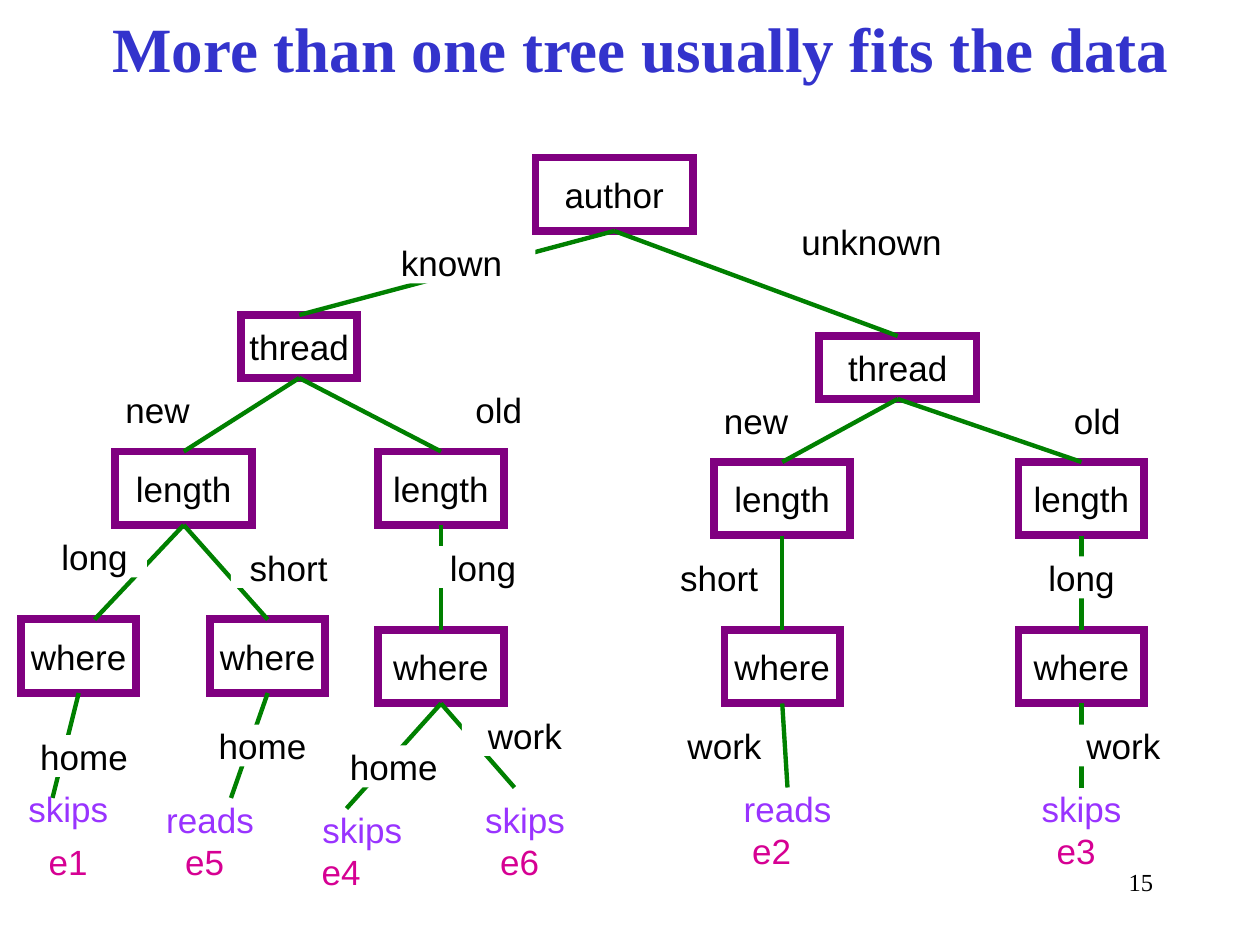
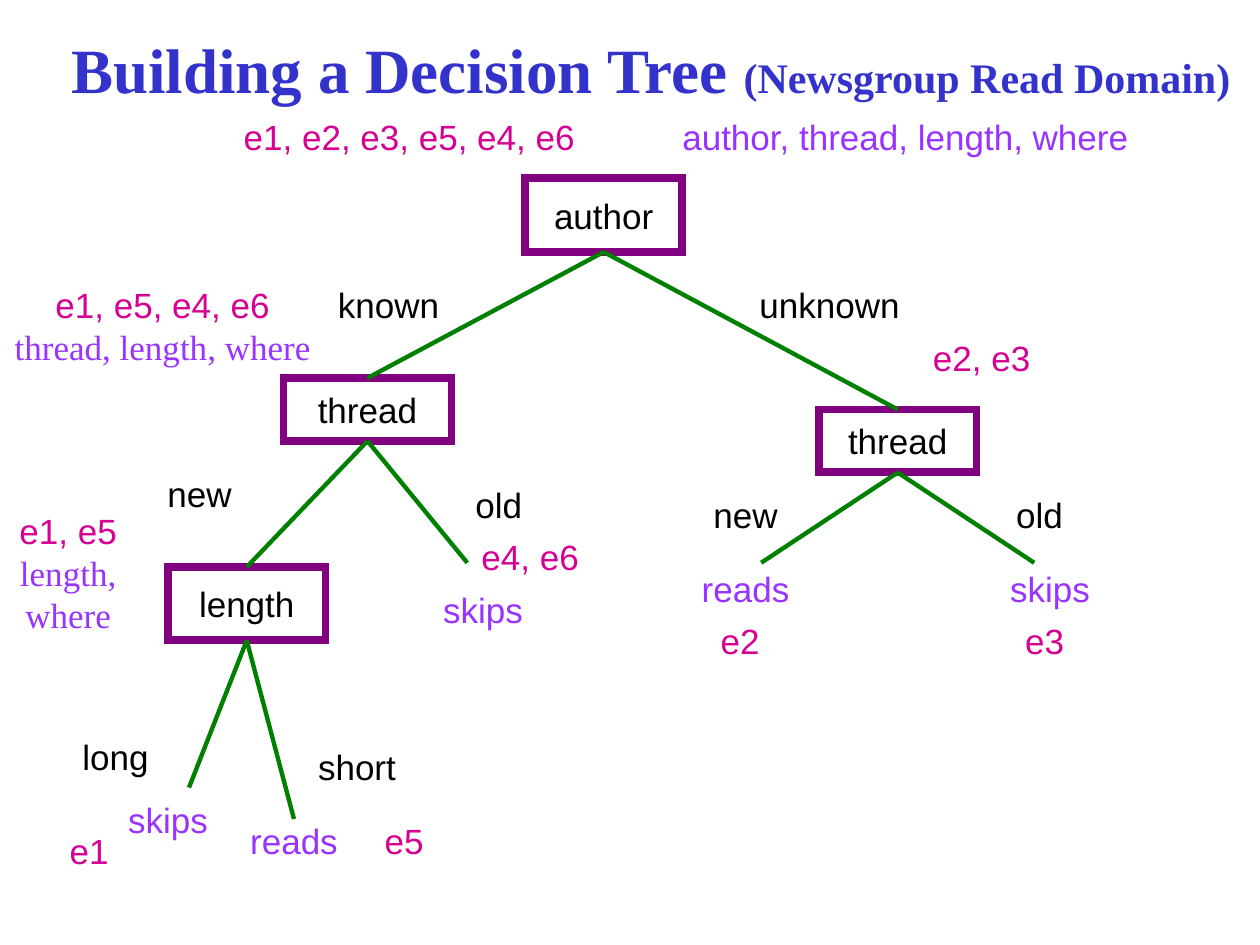
from lxml import etree
from pptx import Presentation, util as u
from pptx.dml.color import RGBColor
from pptx.enum import shapes, text
from pptx.oxml.ns import qn

# All places are counted in grid units of a twelfth of an inch.
UNIT = u.Inches(1) // 12
SLIDE_COLUMNS, SLIDE_ROWS = 120, 90
LABEL_HEIGHT = 4
NODE_HEIGHT = {"author": 7, "thread": 6, "length": 7, "where": 7}

BLACK, WHITE = "000000", "FFFFFF"
TITLE_BLUE, NODE_PURPLE, BRANCH_GREEN = "3333CC", "800080", "008000"
ANSWER, EXAMPLE = "9933FF", "D60093"
SANS, SERIF = "Arial", "Times New Roman"

# nodes: key -> text, left, top, width
# branches: parent key -> child keys or free end points
# labels: text, left, top, width
FULL_TREE = {
    "title": [("More than one tree usually fits the data", 36)],
    "title_at": (5, 0, 112, 9),
    "number": "15",
    "nodes": {
        "author": ("author", 51, 15, 15),
        "known": ("thread", 23, 30, 11),
        "unknown": ("thread", 78, 32, 15),
        "known new": ("length", 11, 43, 13),
        "known old": ("length", 36, 43, 12),
        "unknown new": ("length", 68, 44, 13),
        "unknown old": ("length", 97, 44, 12),
        "e1": ("where", 2, 59, 11),
        "e5": ("where", 20, 59, 11),
        "e4 e6": ("where", 36, 60, 12),
        "e2": ("where", 69, 60, 11),
        "e3": ("where", 97, 60, 12),
    },
    "branches": {
        "author": ["known", "unknown"],
        "known": ["known new", "known old"],
        "unknown": ["unknown new", "unknown old"],
        "known new": [(9, 59), "e5"],
        "known old": ["e4 e6"],
        "unknown new": ["e2"],
        "unknown old": ["e3"],
        "e1": [(5, 76)],
        "e5": [(22, 76)],
        "e4 e6": [(33, 77), (49, 75)],
        "e2": [(75, 75)],
        "e3": [(103, 75)],
    },
    "masking_values": [
        ("known", 35, 23, 16), ("unknown", 75, 21, 16),
        ("long", 4, 51, 10), ("short", 22, 52, 11), ("long", 41, 52, 10),
        ("short", 63, 53, 11), ("long", 98, 53, 10),
        ("home", 0, 70, 16), ("home", 20, 69, 10), ("home", 33, 71, 9),
        ("work", 44, 68, 12), ("work", 64, 69, 10), ("work", 101, 69, 12),
    ],
    "values": [
        ("new", 7, 37, 16), ("old", 42, 37, 11),
        ("new", 64, 38, 16), ("old", 99, 38, 11),
    ],
    "answers": [
        ("skips", 0, 75, 13), ("reads", 12, 76, 16), ("skips", 28, 77, 13),
        ("skips", 42, 76, 16), ("reads", 67, 75, 16), ("skips", 95, 75, 16),
    ],
    "examples": [
        ("e1", 0, 80, 13), ("e5", 13, 80, 13), ("e4", 26, 81, 13),
        ("e6", 43, 80, 13), ("e2", 67, 79, 13), ("e3", 96, 79, 13),
    ],
}

BUILDING_TREE = {
    "title": [("Building a Decision Tree ", 36), ("(Newsgroup Read Domain)", 24)],
    "title_at": (4, 2, 116, 9),
    "nodes": {
        "author": ("author", 50, 17, 15),
        "known": ("thread", 27, 36, 16),
        "unknown": ("thread", 78, 39, 15),
        "known new": ("length", 16, 54, 15),
    },
    "branches": {
        "author": ["known", "unknown"],
        "known": ["known new", (44.5, 53.6)],
        "unknown": [(72.5, 53.6), (98.5, 53.6)],
        "known new": [(18, 75), (28, 78)],
    },
    "values": [
        ("known", 29, 27, 16), ("unknown", 71, 27, 16),
        ("new", 11, 45, 16), ("old", 42, 46, 11),
        ("new", 66, 47, 10), ("old", 91, 47, 16),
        ("long", 3, 70, 16), ("short", 26, 71, 16),
    ],
    "answers": [
        ("author, thread, length, where", 62.25, 11, 48),
        ("skips", 38, 56, 16), ("reads", 63, 54, 16), ("skips", 92, 54, 16),
        ("skips", 8, 76, 16), ("reads", 20, 78, 16),
    ],
    "examples": [
        ("e1, e2, e3, e5, e4, e6", 21, 11, 36),
        ("e2, e3", 87, 32, 13), ("e4, e6", 44, 51, 13),
        ("e2", 64, 59, 13), ("e3", 93, 59, 13),
        ("e1", 2, 79, 13), ("e5", 32, 78, 13),
    ],
    # examples with the attributes still open, one per line: lines, left, top, width
    "states": [
        (["e1, e5, e4, e6", "thread, length, where"], 0.25, 29, 30.5),
        (["e1, e5", "length,", "where"], 0, 52.5, 13),
    ],
}


def grid(*units):
    return [round(value * UNIT) for value in units]


def rgb(colour):
    return RGBColor.from_string(colour)


def write(para, words, size=20, font=SANS, colour=BLACK, bold=False,
          align=text.PP_ALIGN.CENTER):
    para.alignment = align
    span = para.add_run()
    span.text = words
    span.font.size, span.font.name, span.font.bold = u.Pt(size), font, bold
    span.font.color.rgb = rgb(colour)


def centre_frame(box):
    """Keep lines unbroken and centred on the middle of the box."""
    frame = box.text_frame
    frame.word_wrap = False
    frame.margin_left = frame.margin_right = 0
    frame.vertical_anchor = text.MSO_ANCHOR.MIDDLE
    return frame


def add_rectangle(page, left, top, width, height):
    box = page.shapes.add_shape(shapes.MSO_SHAPE.RECTANGLE,
                                *grid(left, top, width, height))
    box.shadow.inherit = False
    return box


def add_node(page, name, left, top, width):
    box = add_rectangle(page, left, top, width, NODE_HEIGHT[name])
    box.fill.background()
    box.line.color.rgb = rgb(NODE_PURPLE)
    box.line.width = u.Pt(4.5)
    outline = box._element.spPr.find(qn("a:ln"))
    etree.SubElement(outline, qn("a:miter"), lim="800000")
    write(centre_frame(box).paragraphs[0], name)
    return box


def add_branch(page, parent, child, nodes):
    """Join the bottom of a node to the top of another, or to a point."""
    end = grid(*child) if isinstance(child, tuple) else (0, 0)
    line = page.shapes.add_connector(shapes.MSO_CONNECTOR.STRAIGHT, 0, 0, *end)
    line.begin_connect(nodes[parent], 2)
    if child in nodes:
        line.end_connect(nodes[child], 0)
    line.line.color.rgb = rgb(BRANCH_GREEN)
    line.line.width = u.Pt(2.5)
    etree.SubElement(line._element.spPr, qn("a:effectLst"))


def add_label(page, words, left, top, width, masking=False, **style):
    if masking:
        box = add_rectangle(page, left, top, width, LABEL_HEIGHT)
        box.fill.solid()
        box.fill.fore_color.rgb = rgb(WHITE)
        box.line.fill.background()
    else:
        box = page.shapes.add_textbox(*grid(left, top, width, LABEL_HEIGHT))
    write(centre_frame(box).paragraphs[0], words, **style)
    return box


def add_state(page, lines, left, top, width):
    examples, *attributes = lines
    box = add_label(page, examples, left, top, width, colour=EXAMPLE)
    for words in attributes:
        write(box.text_frame.add_paragraph(), words, font=SERIF, colour=ANSWER)


def add_title(page, parts, place):
    title = page.shapes.title
    title.left, title.top, title.width, title.height = grid(*place)
    frame = title.text_frame
    frame.auto_size = text.MSO_AUTO_SIZE.NONE
    frame.vertical_anchor = text.MSO_ANCHOR.MIDDLE
    for words, size in parts:
        write(frame.paragraphs[0], words, size=size, font=SERIF,
              colour=TITLE_BLUE, bold=True)


def add_number(page, number):
    box = page.shapes.add_textbox(*grid(86, 82, 25, 6))
    box.text_frame.word_wrap = True
    write(box.text_frame.paragraphs[0], number, size=14, font=SERIF,
          align=text.PP_ALIGN.RIGHT)


def add_tree_slide(deck, tree):
    page = deck.slides.add_slide(deck.slide_layouts[5])
    add_title(page, tree["title"], tree["title_at"])
    nodes = {key: add_node(page, *node) for key, node in tree["nodes"].items()}
    for parent, children in tree["branches"].items():
        for child in children:
            add_branch(page, parent, child, nodes)
    for label in tree.get("masking_values", []):
        add_label(page, *label, masking=True)
    for kind, colour in (("values", BLACK), ("answers", ANSWER),
                         ("examples", EXAMPLE)):
        for label in tree[kind]:
            add_label(page, *label, colour=colour)
    for state in tree.get("states", []):
        add_state(page, *state)
    if "number" in tree:
        add_number(page, tree["number"])


def main():
    deck = Presentation()
    deck.slide_width, deck.slide_height = grid(SLIDE_COLUMNS, SLIDE_ROWS)
    for tree in (FULL_TREE, BUILDING_TREE):
        add_tree_slide(deck, tree)
    deck.save("out.pptx")


if __name__ == "__main__":
    main()
